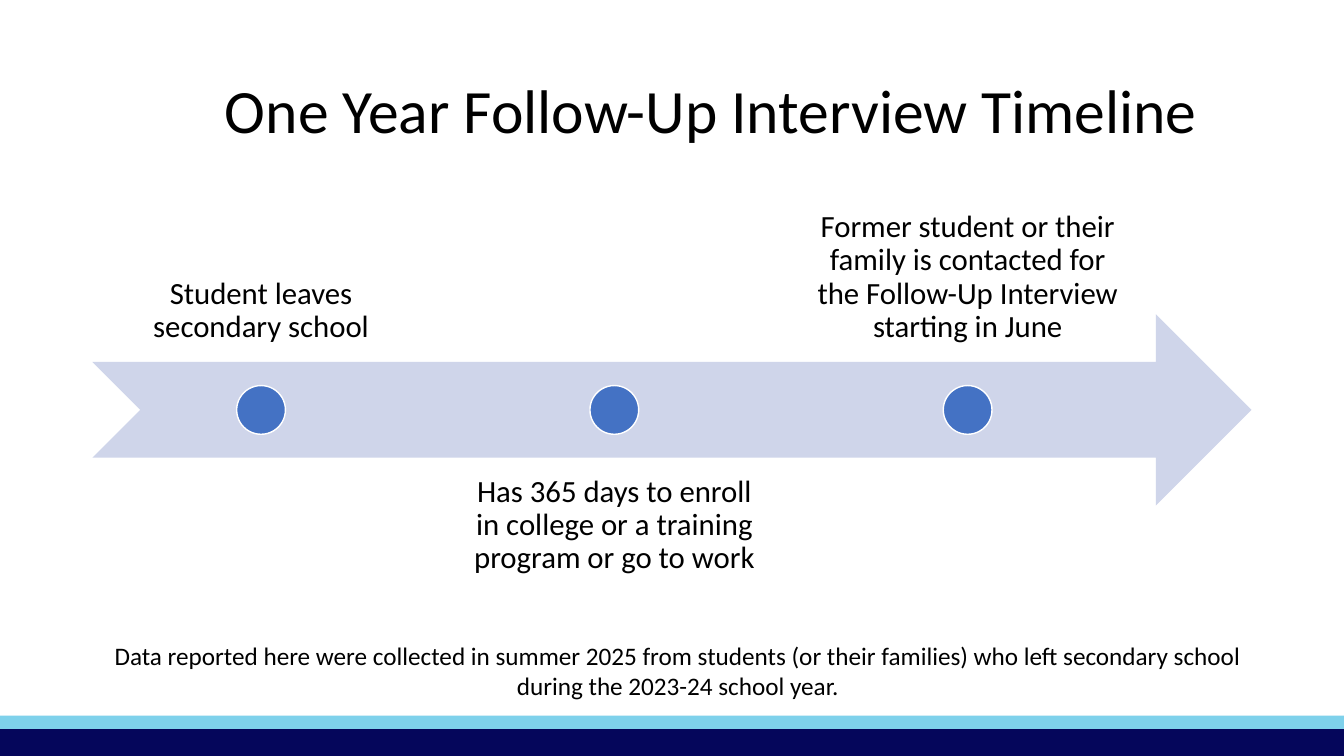
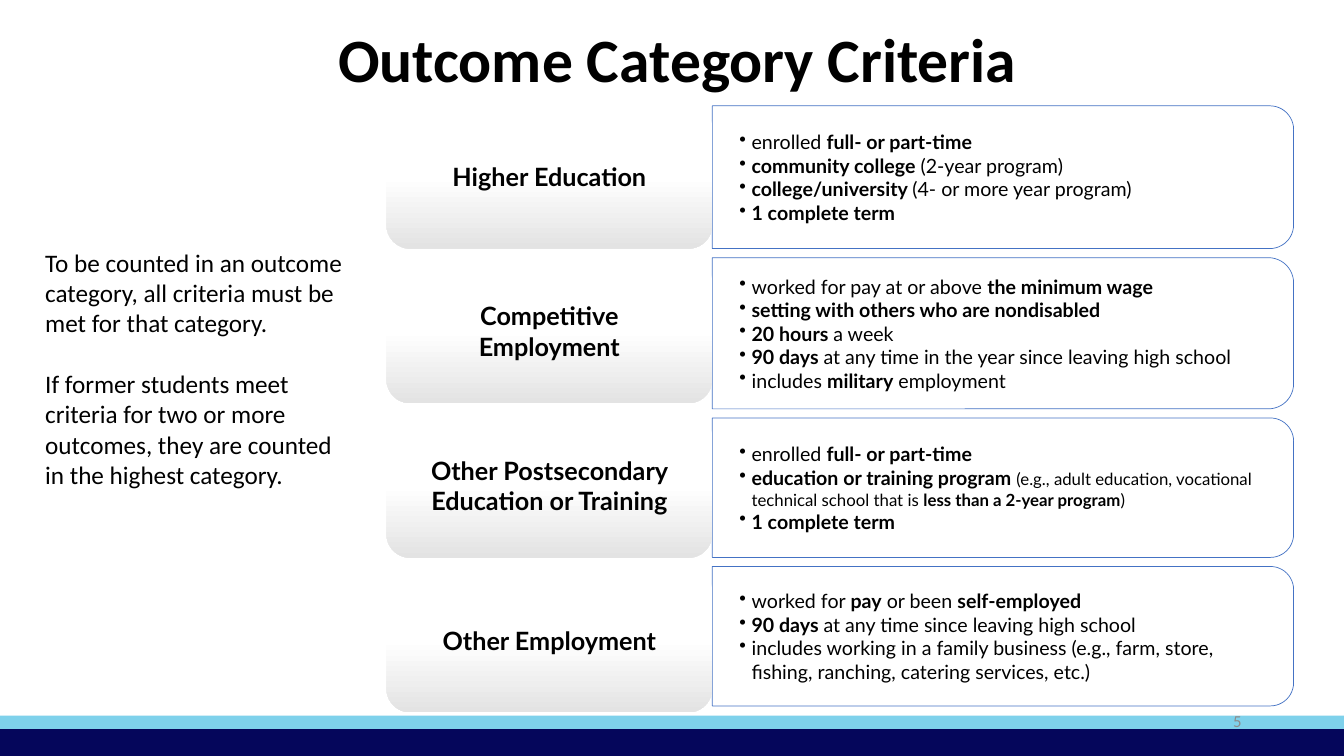
from lxml import etree
from pptx import Presentation
from pptx import util as u
from pptx.dml.color import RGBColor
from pptx.enum import shapes, text
from pptx.oxml.ns import qn

# Grid: 80 columns by 45 rows of square cells
COLS, ROWS = 80, 45
CELL = u.Inches(1) / 6

# Shared look
SKY, NAVY, BLUE, PALE = "7ED1EB", "05065B", "4472C4", "CFD5EA"
BLACK, WHITE, SHADE, GRAY = "000000", "FFFFFF", "E3E3E3", "8C8C8C"
BODY, CARD = "Calibri", "Lato"
KIND, ALIGN, ANCHOR = shapes.MSO_SHAPE, text.PP_ALIGN, text.MSO_ANCHOR

STEPS = [
    "Student leaves secondary school",
    "Has 365 days to enroll in college or a training program or go to work",
    "Former student or their family is contacted for the Follow-Up Interview "
    "starting in June",
]
NOTE = ("Data reported here were collected in summer 2025 from students (or their "
        "families) who left secondary school during the 2023-24 school year.")
RULES = [
    "To be counted in an outcome category, all criteria must be met for that category.",
    "If former students meet criteria for two or more outcomes, they are counted "
    "in the highest category.",
]
# Heading, panel rows, criteria: *bold*, and smaller type after |
GROUPS = [
    ("Higher Education", 8.5, [
        "enrolled *full- or part-time*",
        "*community college *(2-year program)",
        "*college/university *(4- or more year program)",
        "*1 complete term*"]),
    ("Competitive Employment", 9, [
        "worked for pay at or above *the minimum wage*",
        "*setting with others who are nondisabled*",
        "*20 hours *a week",
        "*90 days *at any time in the year since leaving high school",
        "includes *military* employment"]),
    ("Other Postsecondary Education or Training", 8.3, [
        "enrolled *full- or part-time*",
        "*education or training program *|(e.g., adult education, vocational "
        "technical school that is *less than a 2-year program*)",
        "*1 complete term*"]),
    ("Other Employment", 8.3, [
        "worked for *pay* or been *self-employed*",
        "*90 days *at any time since leaving high school",
        "includes working in a family business (e.g., farm, store, fishing, "
        "ranching, catering services, etc.)"]),
]


def color(code):
    return RGBColor.from_string(code)


def cells(*sides):
    return [u.Emu(round(side * CELL)) for side in sides]


def style(run, size, font=BODY, bold=False, ink=BLACK):
    run.font.size = u.Pt(size)
    run.font.name = font
    run.font.bold = bold
    run.font.color.rgb = color(ink)


def form(slide, kind, area, fill, line=None, width=1):
    """Draw a preset shape, outlined only when a line colour is given."""
    item = slide.shapes.add_shape(kind, *cells(*area))
    item.shadow.inherit = False
    item.fill.solid()
    item.fill.fore_color.rgb = color(fill)
    if line:
        item.line.color.rgb = color(line)
        item.line.width = u.Pt(width)
    else:
        item.line.fill.background()
    return item


def pad(frame, side, edge):
    frame.margin_left = frame.margin_right = u.Inches(side)
    frame.margin_top = frame.margin_bottom = u.Inches(edge)


def write(frame, lines, size, align=ALIGN.LEFT, anchor=ANCHOR.TOP, lead=None,
          gap=0, **look):
    """Fill a frame with plain paragraphs in one style."""
    frame.word_wrap = True
    frame.vertical_anchor = anchor
    frame.text = "\n".join(lines)
    for n, para in enumerate(frame.paragraphs):
        para.alignment = align
        para.line_spacing = lead
        if n:
            para.space_before = u.Pt(gap)
        for run in para.runs:
            style(run, size, **look)


def label(slide, area, lines, size, **look):
    frame = slide.shapes.add_textbox(*cells(*area)).text_frame
    write(frame, lines, size, **look)
    return frame


def title(slide, area, words, **look):
    label(slide, area, [words], 44, anchor=ANCHOR.MIDDLE, lead=0.9, **look)


def base(deck):
    """Add a blank slide with the two bands at its foot."""
    slide = deck.slides.add_slide(deck.slide_layouts[6])
    for top, fill in ((42.6, SKY), (43.4, NAVY)):
        form(slide, KIND.RECTANGLE, (0, top, COLS, ROWS - top), fill)
    return slide


def bullet(para, words):
    """Set one criterion with its bullet, bold parts and smaller tail."""
    props = para._p.get_or_add_pPr()
    dent = u.Inches(0.12)
    props.set("marL", str(dent))
    props.set("indent", str(-dent))
    etree.SubElement(props, qn("a:buChar")).set("char", "•")
    for size, part in zip((14, 12), words.split("|")):
        for n, piece in enumerate(part.split("*")):
            if piece:
                run = para.add_run()
                run.text = piece
                style(run, size, CARD, bold=n % 2 == 1)


def panel(slide, left, top, wide, high, lines):
    """Criteria panel, rounded on the right: a top-rounded shape turned."""
    turn = left + (wide - high) / 2, top + (high - wide) / 2, high, wide
    form(slide, KIND.ROUND_2_SAME_RECTANGLE, turn, WHITE, BLUE, 0.5).rotation = 90
    area = cells(left, top, wide - 0.4, high)
    frame = slide.shapes.add_textbox(*area).text_frame
    frame.word_wrap = True
    frame.vertical_anchor = ANCHOR.MIDDLE
    pad(frame, 0.27, 0.14)
    for n, words in enumerate(lines):
        bullet(frame.add_paragraph() if n else frame.paragraphs[0], words)


def card(slide, area, name):
    item = form(slide, KIND.ROUNDED_RECTANGLE, area, WHITE)
    item.fill.gradient()
    item.fill.gradient_angle = 270
    for stop, spot, tone in zip(item.fill.gradient_stops, (0.5, 1), (WHITE, SHADE)):
        stop.position = spot
        stop.color.rgb = color(tone)
    pad(item.text_frame, 0.14, 0.1)
    write(item.text_frame, [name], 18, align=ALIGN.CENTER, anchor=ANCHOR.MIDDLE,
          font=CARD, bold=True)


def timeline(deck):
    slide = base(deck)
    title(slide, (12.8, 2.4, 61.7, 8.7), "One Year Follow-Up Interview Timeline")

    # Arrow, with labels above and below it in turn
    top, high, wide, dot = 18.7, 11.4, 20, 2.9
    form(slide, KIND.NOTCHED_RIGHT_ARROW, (5.5, top, 69, high), PALE)
    for n, words in enumerate(STEPS):
        left = 5.54 + 21.03 * n
        below = n % 2 == 1
        row = top + (8.6 if below else -8.6)
        frame = label(slide, (left, row, wide, high), [words], 22,
                      align=ALIGN.CENTER, lead=0.9,
                      anchor=ANCHOR.TOP if below else ANCHOR.BOTTOM)
        pad(frame, 0.17, 0.17)
        spot = left + (wide - dot) / 2, top + (high - dot) / 2, dot, dot
        form(slide, KIND.OVAL, spot, BLUE, WHITE)

    label(slide, (6.2, 37.8, 68.3, 4.3), [NOTE], 18, align=ALIGN.CENTER)


def criteria(deck):
    slide = base(deck)
    title(slide, (13.3, 0.5, 54.1, 6.4), "Outcome Category Criteria",
          align=ALIGN.CENTER, bold=True)
    label(slide, (2.1, 14.4, 19, 14), RULES, 18, gap=22)

    # One card and one panel for each category
    left, wide, top = 23, 19.4, 6.3
    for n, (name, high, lines) in enumerate(GROUPS):
        panel(slide, left + wide, top, 34.6, high, lines)
        card(slide, (left, 6.2 + 9.2 * n, wide, 8.6), name)
        top += high + 0.54

    label(slide, (56.5, 41.7, 18, 2.4), ["5"], 12, align=ALIGN.RIGHT,
          anchor=ANCHOR.MIDDLE, ink=GRAY)


def main():
    deck = Presentation()
    deck.slide_width, deck.slide_height = cells(COLS, ROWS)
    timeline(deck)
    criteria(deck)
    deck.save("out.pptx")


if __name__ == "__main__":
    main()
